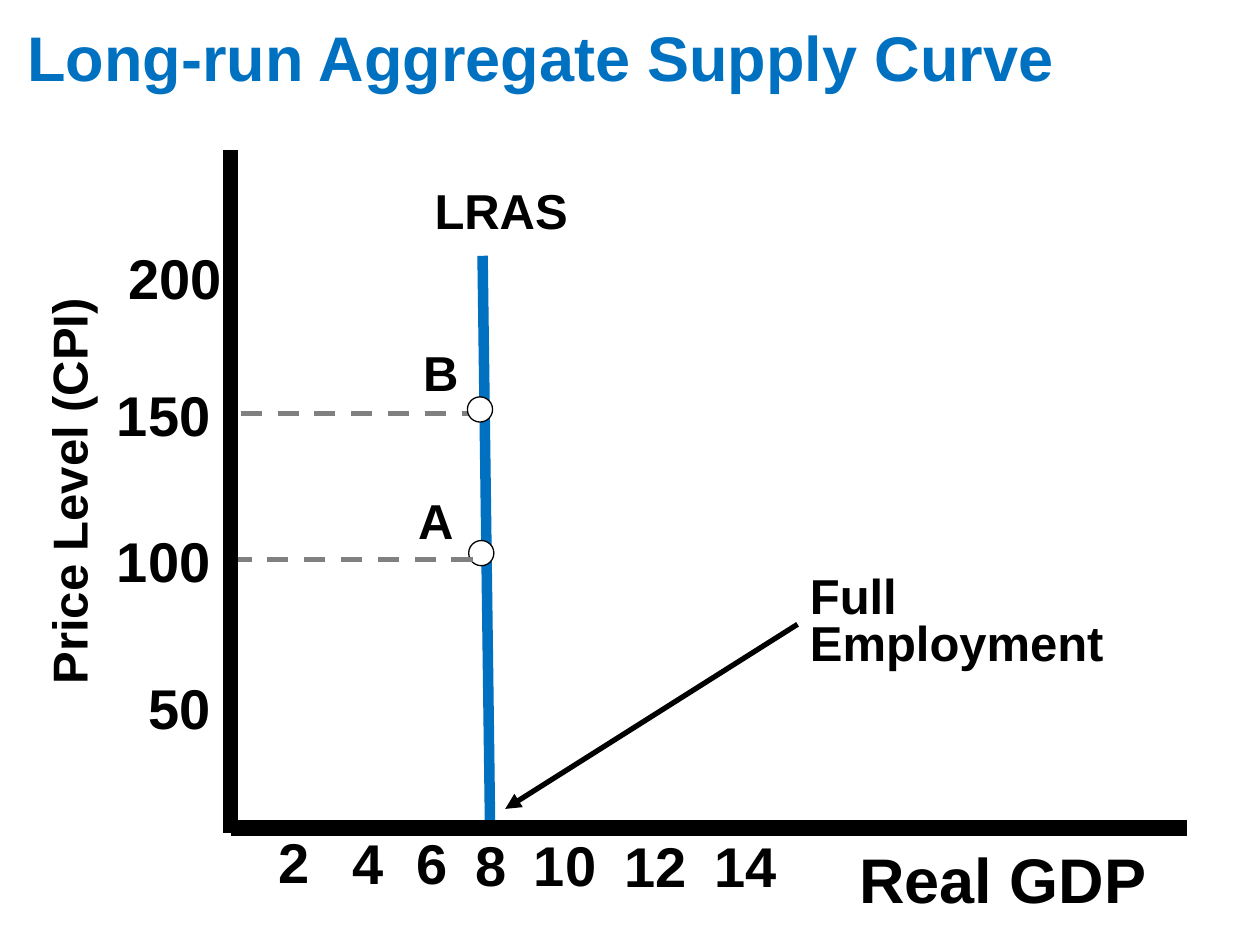
from dataclasses import dataclass

from lxml import etree
from pptx import Presentation
from pptx.dml.color import RGBColor
from pptx.enum.dml import MSO_LINE
from pptx.enum.shapes import MSO_CONNECTOR, MSO_SHAPE
from pptx.enum.text import MSO_AUTO_SIZE, PP_ALIGN
from pptx.oxml.ns import qn
from pptx.util import Inches, Pt

STRAIGHT = MSO_CONNECTOR.STRAIGHT
OVAL = MSO_SHAPE.OVAL
DASH = MSO_LINE.DASH
LEFT, CENTER = PP_ALIGN.LEFT, PP_ALIGN.CENTER
GROW = MSO_AUTO_SIZE.SHAPE_TO_FIT_TEXT
LEFT_SIDE = 1


@dataclass(frozen=True)
class Theme:
    """Colours, font and sizes of the slide."""
    black: RGBColor = RGBColor(0, 0, 0)
    white: RGBColor = RGBColor(255, 255, 255)
    blue: RGBColor = RGBColor(0x00, 0x70, 0xC0)
    gray: RGBColor = RGBColor(0x80, 0x80, 0x80)
    font: str = "Arial"
    title: int = 36
    tick: int = 32
    label: int = 28
    axis_width: float = 9
    curve_width: float = 6
    guide_width: float = 3
    point_width: float = 0.75


THEME = Theme()


def add_label(slide, text, box, size, align=LEFT, color=THEME.black, fill=None, spacing=0.9):
    """Add a bold text box, optionally filled."""
    shape = slide.shapes.add_textbox(*map(Inches, box))
    if fill is not None:
        shape.fill.solid()
        shape.fill.fore_color.rgb = fill
    frame = shape.text_frame
    frame.word_wrap = True
    frame.auto_size = GROW
    paragraph = frame.paragraphs[0]
    paragraph.alignment = align
    paragraph.line_spacing = spacing
    run = paragraph.add_run()
    run.text = text
    run.font.name = THEME.font
    run.font.size = Pt(size)
    run.font.bold = True
    run.font.color.rgb = color
    return shape


def add_line(slide, start, end, width, color=THEME.black, dash=None):
    """Add a straight connector without a shadow."""
    connector = slide.shapes.add_connector(STRAIGHT, *map(Inches, (*start, *end)))
    connector.line.width = Pt(width)
    connector.line.color.rgb = color
    if dash is not None:
        connector.line.dash_style = dash
    etree.SubElement(connector._element.spPr, qn("a:effectLst"))
    return connector


def add_arrowhead(connector):
    """Put a triangle at the end of a connector."""
    etree.SubElement(connector.line._get_or_add_ln(), qn("a:tailEnd"), type="triangle")


def add_point(slide, left, top, diameter=0.2):
    """Add a white circle that marks a point on the curve."""
    shape = slide.shapes.add_shape(OVAL, *map(Inches, (left, top, diameter, diameter)))
    shape.shadow.inherit = False
    shape.fill.solid()
    shape.fill.fore_color.rgb = THEME.white
    shape.line.color.rgb = THEME.black
    shape.line.width = Pt(THEME.point_width)


def add_price_ticks(slide):
    """Add the price levels beside the vertical axis."""
    ticks = (("200", 0.92, 1.94, 1, None), ("150", 0.83, 3.03, 1.02, THEME.white),
             ("100", 0.83, 4.19, 0.95, THEME.white), ("50", 1.08, 5.36, 0.72, None))
    for text, left, top, width, fill in ticks:
        add_label(slide, text, (left, top, width, 0.58), THEME.tick, fill=fill)


def add_output_ticks(slide):
    """Add the output values below the horizontal axis."""
    ticks = (("2", 1.96, 6.58, 0.75), ("4", 2.59, 6.59, 0.67), ("6", 3.14, 6.59, 0.58),
             ("8", 3.61, 6.6, 0.58), ("10", 4.07, 6.6, 0.83), ("12", 4.79, 6.61, 0.83),
             ("14", 5.5, 6.61, 0.83))
    for text, left, top, width in ticks:
        add_label(slide, text, (left, top, width, 0.58), THEME.tick, CENTER)


def add_full_employment(slide):
    """Add the callout and its arrow to the foot of the curve."""
    callout = add_label(slide, "Full Employment", (6.33, 4.53, 2.54, 0.85), THEME.label,
                        spacing=0.8)
    arrow = add_line(slide, (6.33, 4.96), (4.01, 6.42), THEME.guide_width)
    arrow.begin_connect(callout, LEFT_SIDE)
    add_arrowhead(arrow)


def main():
    """Build and save the slide."""
    presentation = Presentation()
    presentation.slide_width, presentation.slide_height = Inches(10), Inches(7.5)
    slide = presentation.slides.add_slide(presentation.slide_layouts[6])
    origin_x = 1.83

    add_price_ticks(slide)
    add_line(slide, (3.83, 2.03), (3.89, 6.58), THEME.curve_width, THEME.blue)
    add_label(slide, "Real GDP", (6.67, 6.69, 2.58, 0.64), THEME.title, CENTER,
              fill=THEME.white)
    add_output_ticks(slide)
    add_label(slide, "B", (3.26, 2.72, 0.75, 0.53), THEME.label)
    add_label(slide, "A", (3.22, 3.9, 0.67, 0.53), THEME.label)
    add_line(slide, (origin_x, 6.57), (9.42, 6.57), THEME.axis_width)
    add_label(slide, "LRAS", (3.35, 1.47, 1.92, 0.48), THEME.label, spacing=0.8)
    add_full_employment(slide)
    add_point(slide, 3.72, 4.29)
    add_label(slide, "Long-run Aggregate Supply Curve", (0.12, 0.17, 8.75, 0.64),
              THEME.title, color=THEME.blue, fill=THEME.white)
    for right, height in ((3.83, 3.28), (3.75, 4.44)):
        add_line(slide, (right, height), (origin_x, height), THEME.guide_width,
                 THEME.gray, DASH)
    axis_title = add_label(slide, "Price Level (CPI)", (-1.64, 3.64, 4.42, 0.52),
                           THEME.label, CENTER)
    axis_title.rotation = 270
    add_line(slide, (origin_x, 1.19), (origin_x, 6.61), THEME.axis_width)
    add_point(slide, 3.71, 3.15)

    presentation.save("out.pptx")


if __name__ == "__main__":
    main()
